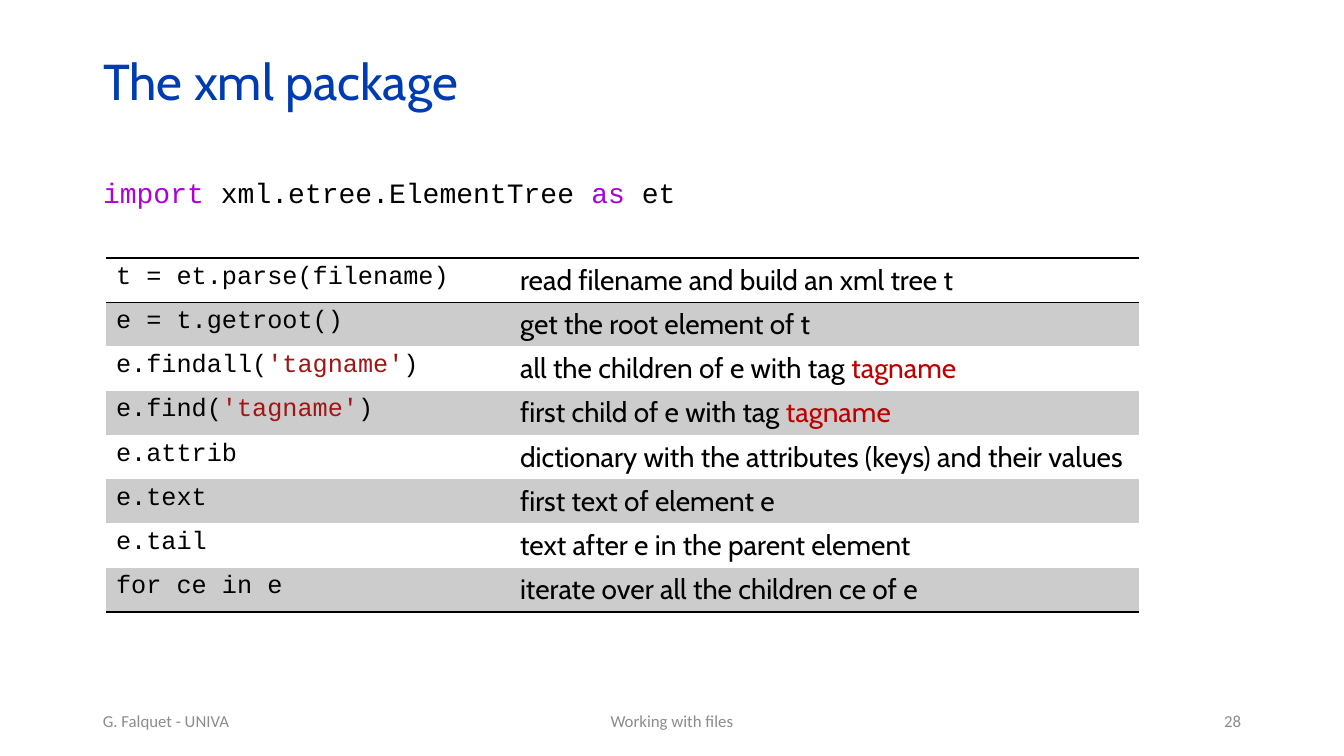
from lxml import etree
from pptx import Presentation
from pptx.dml.color import RGBColor
from pptx.enum.text import MSO_ANCHOR, PP_ALIGN
from pptx.oxml.ns import qn
from pptx.util import Pt

LEFT, CENTER, RIGHT = PP_ALIGN.LEFT, PP_ALIGN.CENTER, PP_ALIGN.RIGHT
MIDDLE = MSO_ANCHOR.MIDDLE

BLACK = RGBColor(0x00, 0x00, 0x00)
BLUE = RGBColor(0x00, 0x3C, 0xB1)
KEYWORD = RGBColor(0xAF, 0x00, 0xDB)
STRING = RGBColor(0xA3, 0x15, 0x15)
RED = RGBColor(0xC0, 0x00, 0x00)
GRAY = RGBColor(0x8C, 0x8C, 0x8C)
BAND = RGBColor(0xCC, 0xCC, 0xCC)
PROSE, CODE, SMALL = "Cabin", "Courier New", "Calibri"

# Content: each text is a list of (wording, colour) pieces
TITLE = [("The xml package", BLUE)]
IMPORT_LINE = [("import ", KEYWORD), ("xml.etree.ElementTree ", BLACK),
               ("as", KEYWORD), (" et", BLACK)]
METHODS = [
    ([("t = et.parse(filename)", BLACK)],
     [("read filename and build an xml tree t", BLACK)]),
    ([("e = t.getroot()", BLACK)],
     [("get the root element of t", BLACK)]),
    ([("e.findall(", BLACK), ("'tagname'", STRING), (")", BLACK)],
     [("all the children of e with tag ", BLACK), ("tagname", RED)]),
    ([("e.find(", BLACK), ("'tagname'", STRING), (")", BLACK)],
     [("first child of e with tag ", BLACK), ("tagname", RED)]),
    ([("e.attrib", BLACK)],
     [("dictionary with the attributes (keys) and their values", BLACK)]),
    ([("e.text", BLACK)],
     [("first text of element e", BLACK)]),
    ([("e.tail", BLACK)],
     [("text after e in the parent element", BLACK)]),
    ([("for ce in e", BLACK)],
     [("iterate over all the children ce of e", BLACK)]),
]
FOOTERS = [  # wording, left, width, alignment
    ("G. Falquet - UNIVA", 93, 302, LEFT),
    ("Working with files", 445, 454, CENTER),
    ("28", 949, 302, RIGHT),
]

# Layout in px
TITLE_BOX = (93, 40, 1159, 89)
BODY_BOX = (93, 174, 1159, 506)
TABLE_LEFT, TABLE_TOP, ROW_HEIGHT = 106, 258, 44
COLUMN_WIDTHS = (404, 629)
FOOTER_TOP, FOOTER_HEIGHT = 701, 40
NO_STYLE = "{2D5ABB26-0587-4C30-8999-92F81FD0307C}"


def px(length):
    return round(length * 914400 / 100.8)


def place(shape, box):
    shape.left, shape.top, shape.width, shape.height = map(px, box)


def write(frame, pieces, font, size, align=LEFT):
    paragraph = frame.paragraphs[0]
    paragraph.alignment = align
    for wording, color in pieces:
        run = paragraph.add_run()
        run.text = wording
        run.font.name, run.font.size = font, Pt(size)
        run.font.color.rgb = color
    return paragraph


def add_rule(cell, side):
    """Draw a 1 pt black line on a cell's top (lnT) or bottom (lnB)."""
    line = etree.Element(qn("a:" + side), w=str(Pt(1)))
    fill = etree.SubElement(line, qn("a:solidFill"))
    etree.SubElement(fill, qn("a:srgbClr"), val=str(BLACK))
    cell._tc.get_or_add_tcPr().insert(0, line)


prs = Presentation()
prs.slide_width, prs.slide_height = px(1344), px(756)
slide = prs.slides.add_slide(prs.slide_layouts[1])

# Title
title = slide.shapes.title
place(title, TITLE_BOX)
title.text_frame.vertical_anchor = MIDDLE
write(title.text_frame, TITLE, PROSE, 36).line_spacing = 0.9

# Import statement
body = slide.placeholders[1]
place(body, BODY_BOX)
statement = write(body.text_frame, IMPORT_LINE, CODE, 20)
statement.line_spacing, statement.space_before = 0.9, Pt(10)
properties = statement._p.get_or_add_pPr()
properties.set("marL", "0")
properties.set("indent", "0")
etree.SubElement(properties, qn("a:buNone"))

# Table of methods
table = slide.shapes.add_table(
    len(METHODS), len(COLUMN_WIDTHS), px(TABLE_LEFT), px(TABLE_TOP),
    px(sum(COLUMN_WIDTHS)), px(ROW_HEIGHT * len(METHODS))).table
table.first_row = table.horz_banding = False
table._tbl.tblPr.find(qn("a:tableStyleId")).text = NO_STYLE
for column, width in zip(table.columns, COLUMN_WIDTHS):
    column.width = px(width)
for r, (call, meaning) in enumerate(METHODS):
    table.rows[r].height = px(ROW_HEIGHT)
    for c, (pieces, font, size) in enumerate([(call, CODE, 18), (meaning, PROSE, 20)]):
        cell = table.cell(r, c)
        write(cell.text_frame, pieces, font, size)
        if r % 2:
            cell.fill.solid()
            cell.fill.fore_color.rgb = BAND
        else:
            cell.fill.background()
        if r in (0, len(METHODS) - 1):
            add_rule(cell, "lnB")
        if r == 0:
            add_rule(cell, "lnT")

# Footer
for wording, left, width, align in FOOTERS:
    footer = slide.shapes.add_textbox(px(left), px(FOOTER_TOP), px(width), px(FOOTER_HEIGHT))
    footer.text_frame.word_wrap = True
    footer.text_frame.vertical_anchor = MIDDLE
    write(footer.text_frame, [(wording, GRAY)], SMALL, 12, align)

prs.save("out.pptx")
